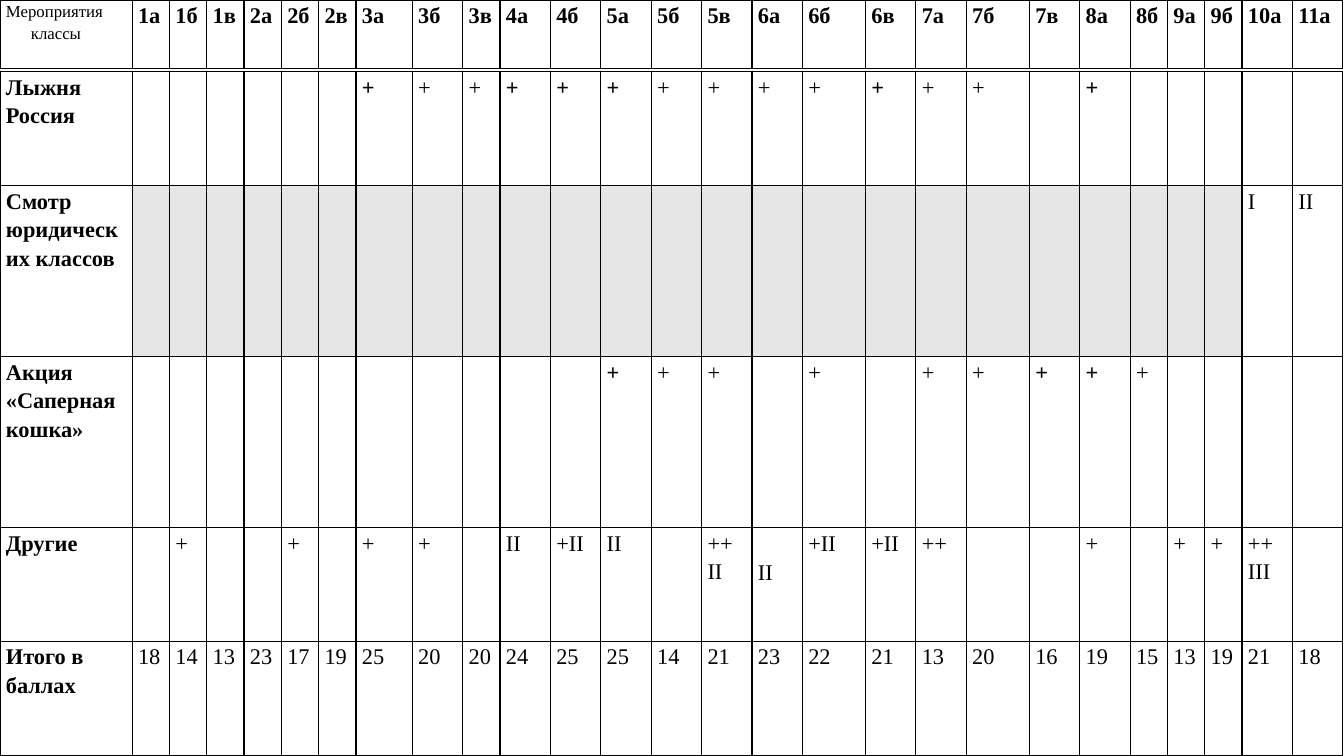
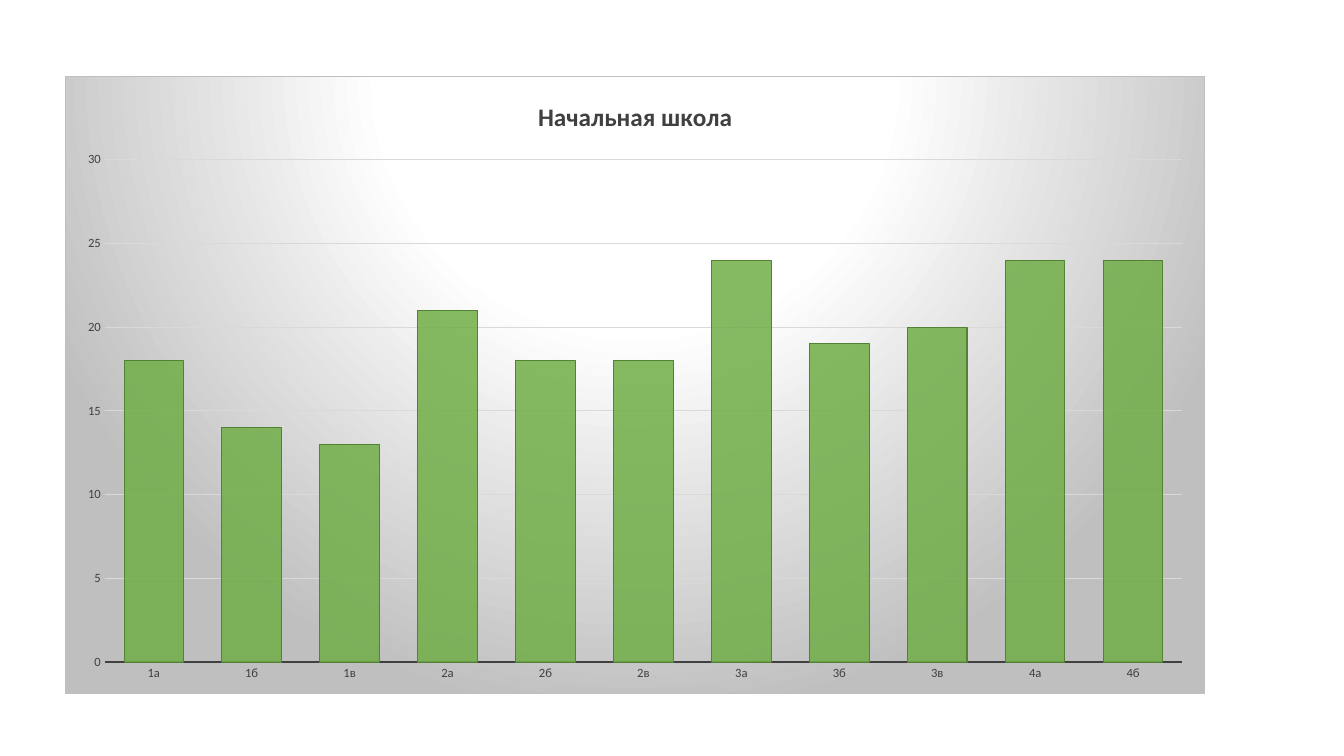
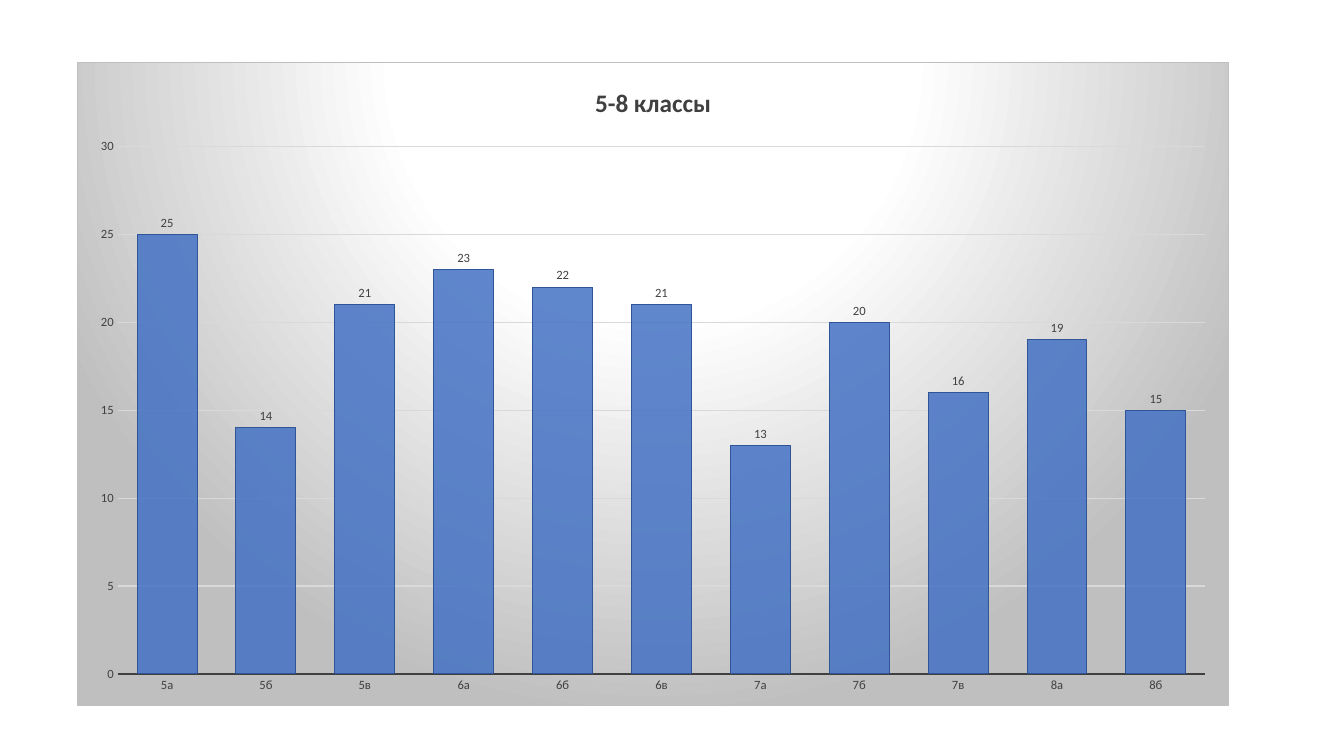
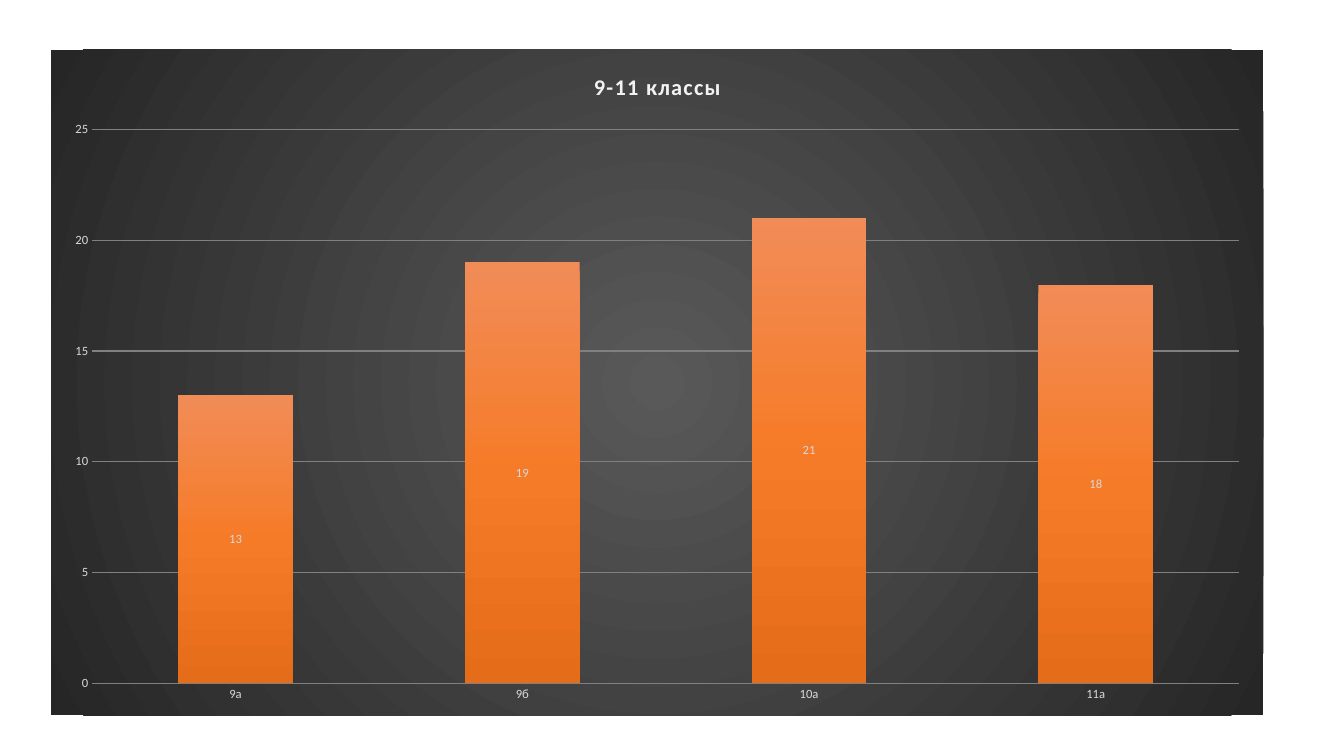
from pptx import Presentation, oxml
from pptx import util as u
from pptx.chart import data as cd
from pptx.dml import color as dml
from pptx.enum import chart as ce
from pptx.oxml import ns

# Shared look
TABLE_FONT, CHART_FONT = "Times New Roman", "Calibri"
BLACK, WHITE, GREY = "000000", "FFFFFF", "E7E6E6"
INK, PALE, SILVER = "404040", "D9D9D9", "BFBFBF"
LIGHT_STOPS = [(0, WHITE), (39, WHITE), (100, SILVER)]
DARK_STOPS = [(0, "595959"), (100, "262626")]
ORANGE_STOPS = [(0, "F18C57"), (50, "F67B28"), (100, "E56C19")]

# Class table: "-" is an empty cell, "*" marks bold, "/" starts a new paragraph
NARROW, MIDDLE, WIDE = 0.94, 1.27, 1.59
COLUMNS = ([3.33] + [NARROW] * 6 + [1.42, MIDDLE, NARROW] + [MIDDLE] * 6
           + [WIDE, MIDDLE, MIDDLE] * 2 + [NARROW] * 3 + [MIDDLE] * 2)
CLASSES = ("1а 1б 1в 2а 2б 2в 3а 3б 3в 4а 4б 5а 5б 5в 6а 6б 6в "
           "7а 7б 7в 8а 8б 9а 9б 10а 11а").split()
EVENTS = [
    ("Лыжня Россия", 2.87,
     "- - - - - - +* + + +* +* +* + + + + +* + + - +* - - - - -"),
    ("Смотр юридических классов", 4.31, "- " * 24 + "I II"),
    ("Акция «Саперная кошка»", 4.31,
     "- - - - - - - - - - - +* + + - + - + + +* +* + - - - -"),
    ("Другие", 2.87,
     "- + - - + - + + - II +II II - ++/II II +II +II ++ - - + - + + ++/III -"),
    ("Итого в баллах", 2.87,
     "18 14 13 23 17 19 25 20 20 24 25 25 14 21 23 22 21 13 20 16 19 15 13 19 21 18"),
]


def rgb(value):
    return dml.RGBColor.from_string(value)


def assign(target, formats):
    for name, value in formats.items():
        setattr(target, name, value)


def style_font(font, face, size, color, bold=False):
    assign(font, {"name": face, "size": u.Pt(size), "bold": bold})
    font.color.rgb = rgb(color)


def style_line(line, color, width):
    line.color.rgb = rgb(color)
    line.width = u.Pt(width)


# Fills and borders that need XML
def fragment(body):
    return oxml.parse_xml(body.replace(">", " " + ns.nsdecls("a", "c") + ">", 1))


def solid(color, alpha=100):
    return (f'<a:solidFill><a:srgbClr val="{color}"><a:alpha val="{alpha * 1000}"/>'
            '</a:srgbClr></a:solidFill>')


def gradient(stops, shade):
    marks = "".join(f'<a:gs pos="{place * 1000}"><a:srgbClr val="{color}"/></a:gs>'
                    for place, color in stops)
    return f"<a:gradFill><a:gsLst>{marks}</a:gsLst>{shade}</a:gradFill>"


def circle(top, bottom):
    return ('<a:path path="circle"><a:fillToRect l="50000" r="50000" '
            f't="{top * 1000}" b="{bottom * 1000}"/></a:path>')


def outline(color, width, tag="ln"):
    return f'<a:{tag} w="{u.Pt(width)}">{solid(color)}</a:{tag}>'


# Table
def fill_cell(cell, lines, size, bold=False, fill=None, top=0):
    assign(cell, {"margin_left": u.Cm(0.15), "margin_right": u.Cm(0.15),
                  "margin_top": u.Cm(top), "margin_bottom": 0})
    cell.text = "\n".join(lines)
    for para in cell.text_frame.paragraphs:
        para.line_spacing = 1.15
        style_font(para.font, TABLE_FONT, size, BLACK, bold)
        for span in para.runs:
            style_font(span.font, TABLE_FONT, size, BLACK, bold)
    if fill:
        cell.fill.solid()
        cell.fill.fore_color.rgb = rgb(fill)
    else:
        cell.fill.background()
    properties = cell._tc.get_or_add_tcPr()
    for place, side in enumerate(("lnL", "lnR", "lnT", "lnB")):
        properties.insert(place, fragment(outline(BLACK, 1, side)))


def add_grid(page, top, heights):
    frame = page.shapes.add_table(len(heights), len(COLUMNS), 0, u.Cm(top),
                                  u.Cm(sum(COLUMNS)), u.Cm(sum(heights)))
    grid = frame.table
    assign(grid, {"first_row": False, "horz_banding": False})
    for column, width in zip(grid.columns, COLUMNS):
        column.width = u.Cm(width)
    for row, height in zip(grid.rows, heights):
        row.height = u.Cm(height)
    return grid


def add_events(page):
    grid = add_grid(page, 1.8, [height for _, height, _ in EVENTS])
    for row, (event, _, marks) in enumerate(EVENTS):
        fill_cell(grid.cell(row, 0), [event], 16, True)
        for column, mark in enumerate(marks.split(), 1):
            shade = {1: GREY, 2: WHITE}.get(row) if column <= 24 else None
            lowered = event == "Другие" and CLASSES[column - 1] == "6а"
            lines = mark.strip("*-").split("/")
            fill_cell(grid.cell(row, column), lines, 16, mark.endswith("*"),
                      shade, 0.74 if lowered else 0)


def add_header(page):
    grid = add_grid(page, 0, [1.73])
    corner = grid.cell(0, 0)
    fill_cell(corner, ["Мероприятия", "классы"], 12)
    indent = corner.text_frame.paragraphs[1]._p.get_or_add_pPr()
    indent.set("marL", str(u.Cm(0.63)))
    for column, name in enumerate(CLASSES, 1):
        fill_cell(grid.cell(0, column), [name], 16, True)


# Charts
def style_axis(axis, ink, line=None):
    assign(axis, {"major_tick_mark": ce.XL_TICK_MARK.NONE,
                  "minor_tick_mark": ce.XL_TICK_MARK.NONE})
    style_font(axis.tick_labels.font, CHART_FONT, 9, ink)
    if line:
        style_line(axis.format.line, line, 1.5)
    else:
        axis.format.line.fill.background()


def add_columns(page, place, title, names, values, look):
    numbers = cd.CategoryChartData()
    numbers.categories = names
    numbers.add_series("Series 1", values)
    kind = look.get("kind", ce.XL_CHART_TYPE.COLUMN_CLUSTERED)
    chart = page.shapes.add_chart(kind, *map(u.Cm, place), numbers).chart
    ink = look.get("ink", INK)
    chart.has_legend = False
    style_font(chart.font, CHART_FONT, 10, BLACK)

    # Title
    chart.has_title = True
    chart.chart_title.include_in_layout = False
    chart.chart_title.text_frame.text = title
    span = chart.chart_title.text_frame.paragraphs[0].runs[0]
    style_font(span.font, CHART_FONT, look.get("title_size", 18),
               look.get("title_ink", INK), True)
    if "spacing" in look:
        span.font._element.set("spc", str(look["spacing"]))

    # Background
    border = look.get("border", "<a:ln><a:noFill/></a:ln>")
    chart.element.find(ns.qn("c:chart")).addnext(
        fragment(f'<c:spPr>{look["ground"]}{border}</c:spPr>'))

    # Axes
    style_axis(chart.category_axis, ink, look.get("base"))
    style_axis(chart.value_axis, ink)
    assign(chart.value_axis, {"minimum_scale": 0, "maximum_scale": look.get("top", 30),
                              "major_unit": 5, "has_major_gridlines": True})
    style_line(chart.value_axis.major_gridlines.format.line, look.get("grid", PALE), 0.75)

    # Columns
    plot = chart.plots[0]
    assign(plot, {"gap_width": look.get("gap", 65), "vary_by_categories": False,
                  "overlap": look.get("overlap", 0)})
    series = plot.series[0]
    series.invert_if_negative = False
    series._element.get_or_add_spPr().insert(0, fragment(look["fill"]))
    if "edge" in look:
        style_line(series.format.line, look["edge"], 0.75)
    if "labels" in look:
        labels = series.data_labels
        assign(labels, {"show_value": True, "position": look["labels"]})
        style_font(labels.font, CHART_FONT, 9, ink)


def main():
    deck = Presentation()
    assign(deck, {"slide_width": u.Cm(33.87), "slide_height": u.Cm(19.05)})
    table_page, junior, middle, senior = [
        deck.slides.add_slide(deck.slide_layouts[6]) for _ in range(4)]

    add_events(table_page)
    add_header(table_page)

    light = {"ground": gradient(LIGHT_STOPS, circle(-80, 180)),
             "border": outline(SILVER, 0.75), "base": INK}
    dark = {"ground": gradient(DARK_STOPS, circle(50, 50)), "ink": PALE,
            "title_ink": "F2F2F2", "title_size": 16, "spacing": 100,
            "grid": "808080", "top": 25, "gap": 150, "overlap": 100,
            "kind": ce.XL_CHART_TYPE.COLUMN_STACKED,
            "fill": gradient(ORANGE_STOPS, '<a:lin ang="5400000" scaled="0"/>'),
            "labels": ce.XL_LABEL_POSITION.CENTER}
    add_columns(junior, (1.63, 1.92, 28.75, 15.56), "Начальная школа", CLASSES[:11],
                (18, 14, 13, 21, 18, 18, 24, 19, 20, 24, 24),
                {**light, "fill": solid("70AD47", 85), "edge": "548235"})
    add_columns(middle, (1.95, 1.56, 29.02, 16.23), "5-8 классы", CLASSES[11:22],
                (25, 14, 21, 23, 22, 21, 13, 20, 16, 19, 15),
                {**light, "fill": solid("4472C4", 85), "edge": "2F5597",
                 "labels": ce.XL_LABEL_POSITION.OUTSIDE_END})
    add_columns(senior, (1.29, 1.25, 30.55, 16.77), "9-11 классы", CLASSES[22:],
                (13, 19, 21, 18), dark)

    deck.save("out.pptx")


if __name__ == "__main__":
    main()
